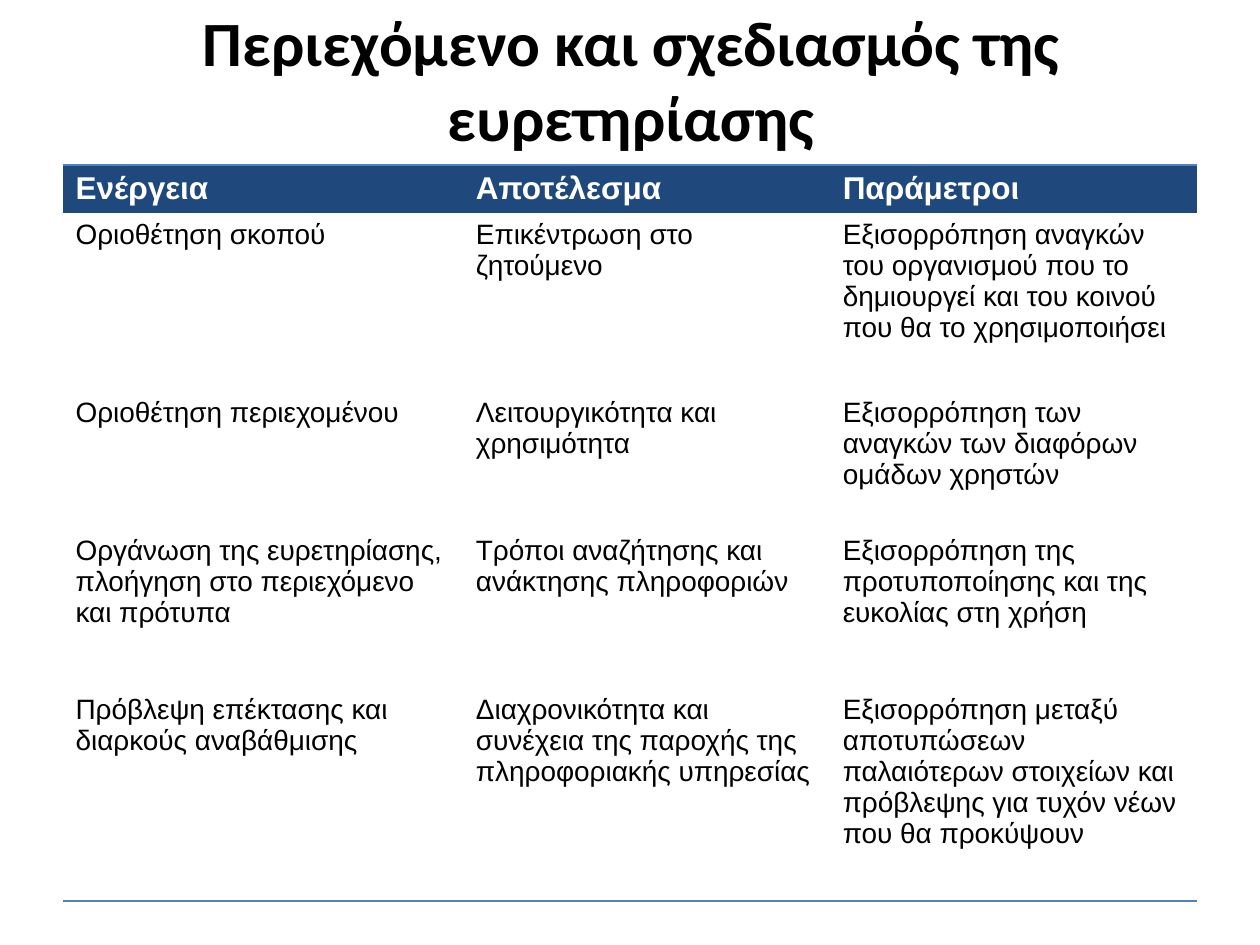
from dataclasses import dataclass

import pptx
import pptx.dml.color
import pptx.enum.text
import pptx.oxml
import pptx.oxml.ns
import pptx.table
import pptx.text.text
import pptx.util

Pt = pptx.util.Pt
RGB = pptx.dml.color.RGBColor
Align = pptx.enum.text.PP_ALIGN


@dataclass(frozen=True)
class TextFormat:
    name: str
    size: int
    color: str
    bold: bool
    alignment: Align


@dataclass(frozen=True)
class Theme:
    title: TextFormat = TextFormat("Calibri", 36, "000000", True, Align.CENTER)
    header: TextFormat = TextFormat("Arial", 18, "FFFFFF", True, Align.JUSTIFY)
    body: TextFormat = TextFormat("Arial", 16, "000000", False, Align.LEFT)
    header_fill: str = "1F497D"
    rule: str = "4F81BD"
    rule_width: int = 1


@dataclass(frozen=True)
class TableRow:
    height: float
    texts: tuple[str, str, str]


THEME = Theme()
COLUMN_WIDTHS = (228.8, 209.6, 209.6)
ROWS = (
    TableRow(25.2, ("Ενέργεια", "Αποτέλεσμα", "Παράμετροι")),
    TableRow(101.6, (
        "Οριοθέτηση σκοπού",
        "Επικέντρωση στο ζητούμενο",
        "Εξισορρόπηση αναγκών του οργανισμού που το δημιουργεί "
        "και του κοινού που θα το χρησιμοποιήσει",
    )),
    TableRow(79.1, (
        "Οριοθέτηση περιεχομένου",
        "Λειτουργικότητα και χρησιμότητα",
        "Εξισορρόπηση των αναγκών των διαφόρων ομάδων χρηστών",
    )),
    TableRow(90.8, (
        "Οργάνωση της ευρετηρίασης, πλοήγηση στο περιεχόμενο και πρότυπα",
        "Τρόποι αναζήτησης και ανάκτησης πληροφοριών",
        "Εξισορρόπηση της προτυποποίησης και της ευκολίας στη χρήση",
    )),
    TableRow(121.6, (
        "Πρόβλεψη επέκτασης και διαρκούς αναβάθμισης",
        "Διαχρονικότητα και συνέχεια της παροχής της πληροφοριακής υπηρεσίας",
        "Εξισορρόπηση μεταξύ αποτυπώσεων παλαιότερων στοιχείων "
        "και πρόβλεψης για τυχόν νέων που θα προκύψουν",
    )),
)


def write_text(frame: pptx.text.text.TextFrame, text: str, style: TextFormat) -> None:
    para = frame.paragraphs[0]
    para.alignment = style.alignment
    span = para.add_run()
    span.text = text
    values = {"name": style.name, "size": Pt(style.size), "bold": style.bold}
    for attribute, value in values.items():
        setattr(span.font, attribute, value)
    span.font.color.rgb = RGB.from_string(style.color)


def set_borders(cell: pptx.table._Cell, ruled_sides: str) -> None:
    """Rule the sides named by their letters (L, R, T, B) and clear the others."""
    properties = cell._tc.get_or_add_tcPr()
    namespace = pptx.oxml.ns.nsdecls("a")
    solid = f'<a:solidFill><a:srgbClr val="{THEME.rule}"/></a:solidFill>'
    for position, side in enumerate("LRTB"):
        fill = solid if side in ruled_sides else "<a:noFill/>"
        border = pptx.oxml.parse_xml(
            f'<a:ln{side} {namespace} w="{Pt(THEME.rule_width)}">{fill}</a:ln{side}>'
        )
        properties.insert(position, border)


def fill_cell(cell: pptx.table._Cell, text: str, is_header: bool, is_last: bool) -> None:
    write_text(cell.text_frame, text, THEME.header if is_header else THEME.body)
    if is_header:
        cell.fill.solid()
        cell.fill.fore_color.rgb = RGB.from_string(THEME.header_fill)
    else:
        cell.fill.background()
    set_borders(cell, "T" if is_header else "B" if is_last else "")


def add_title(slide, text: str) -> None:
    box = slide.shapes.title
    place = {"left": 36.7, "top": 9.4, "width": 648, "height": 71.3}
    for attribute, value in place.items():
        setattr(box, attribute, Pt(value))
    frame_format = {
        "word_wrap": True,
        "auto_size": pptx.enum.text.MSO_AUTO_SIZE.NONE,
        "vertical_anchor": pptx.enum.text.MSO_ANCHOR.MIDDLE,
    }
    for attribute, value in frame_format.items():
        setattr(box.text_frame, attribute, value)
    write_text(box.text_frame, text, THEME.title)


def add_action_table(slide) -> None:
    table = slide.shapes.add_table(
        len(ROWS), len(COLUMN_WIDTHS), Pt(36), Pt(94.3),
        Pt(sum(COLUMN_WIDTHS)), Pt(sum(row.height for row in ROWS)),
    ).table
    table.horz_banding = False
    for column, width in zip(table.columns, COLUMN_WIDTHS):
        column.width = Pt(width)
    for index, row in enumerate(ROWS):
        table.rows[index].height = Pt(row.height)
        for cell, text in zip(table.rows[index].cells, row.texts):
            fill_cell(cell, text, index == 0, index == len(ROWS) - 1)


def main() -> None:
    deck = pptx.Presentation()
    deck.slide_width, deck.slide_height = Pt(720), Pt(540)
    page = deck.slides.add_slide(deck.slide_layouts.get_by_name("Title Only"))
    add_title(page, "Περιεχόμενο και σχεδιασμός της ευρετηρίασης")
    add_action_table(page)
    deck.save("out.pptx")


if __name__ == "__main__":
    main()
